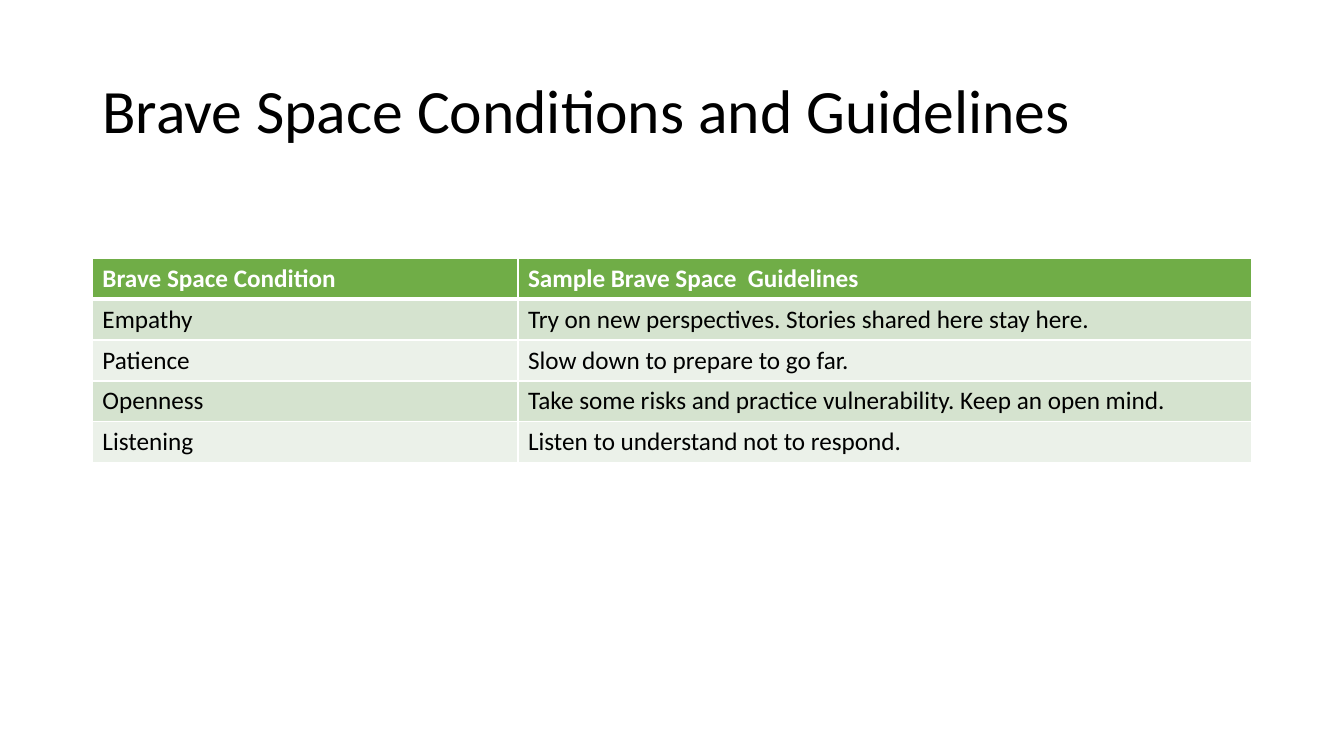
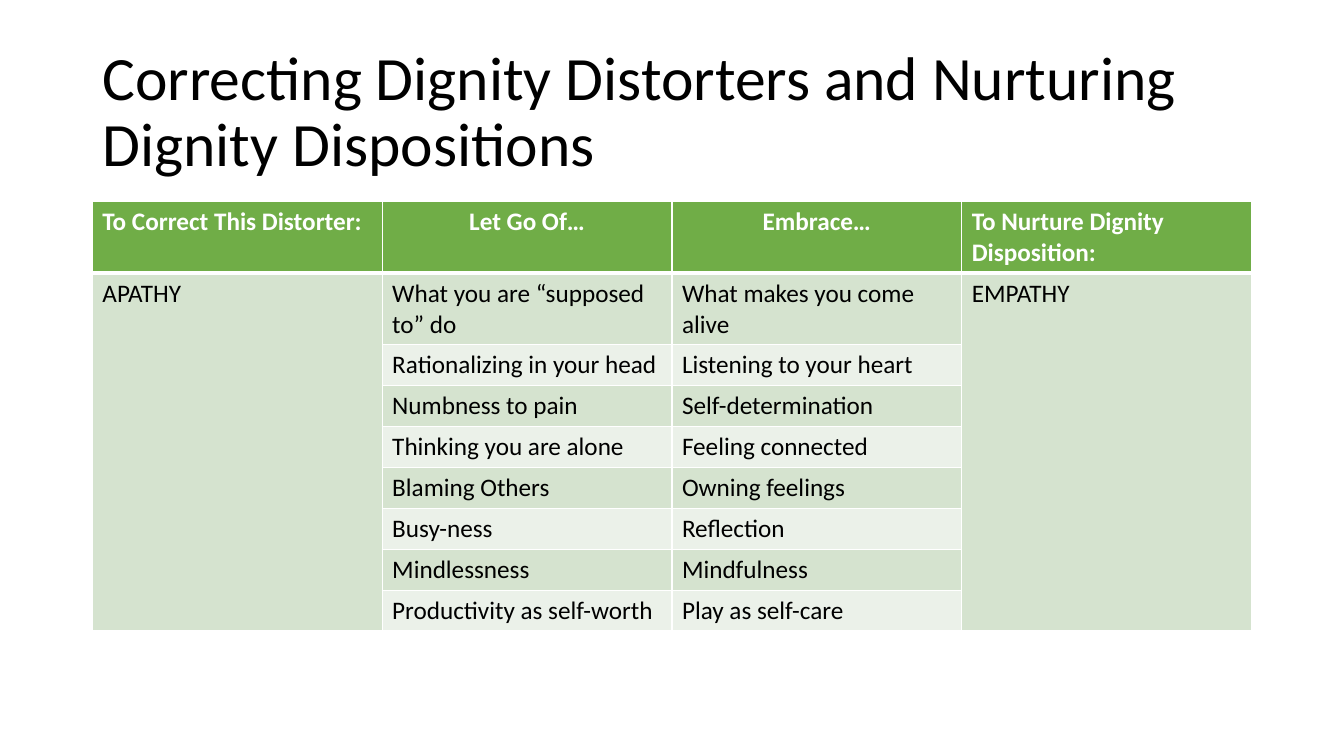
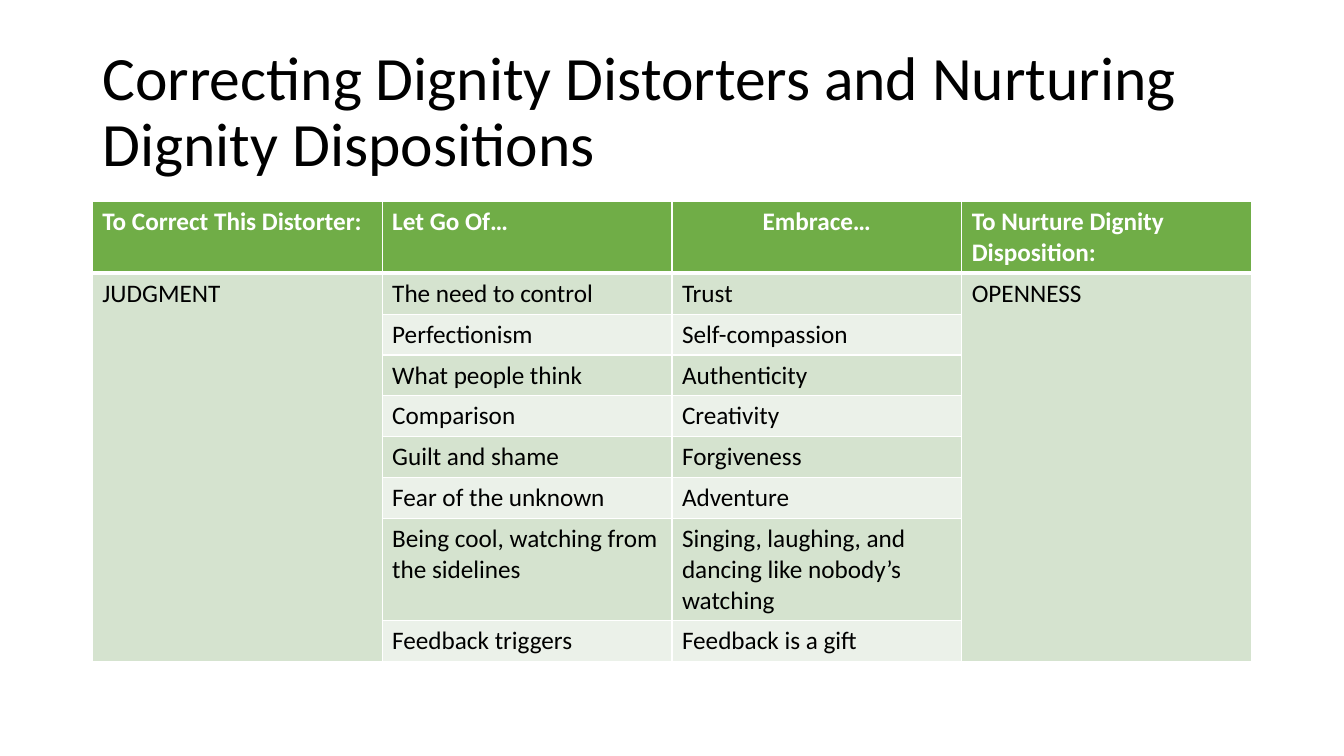
import dataclasses

import pptx
import pptx.dml.color
import pptx.enum.text
import pptx.oxml
import pptx.oxml.ns
import pptx.util

Pt = pptx.util.Pt
RGB = pptx.dml.color.RGBColor.from_string
ALIGN = pptx.enum.text.PP_ALIGN
ANCHOR = pptx.enum.text.MSO_ANCHOR


@dataclasses.dataclass(frozen=True)
class Theme:
    font: str = "Calibri"
    title_size: int = 44
    body_size: int = 18
    text: str = "000000"
    light: str = "FFFFFF"
    header: str = "70AD47"
    bands: tuple = ("D5E3CF", "EBF1E9")
    left: float = 66
    width: float = 828
    title_top: float = 28.75
    title_height: float = 104.4
    row_height: float = 29.2
    thin: int = 1
    thick: int = 3


class Deck:
    """Build titled slides with banded tables in one shared style."""

    def __init__(self, theme):
        self.theme = theme
        self.prs = pptx.Presentation()
        self.prs.slide_width, self.prs.slide_height = Pt(960), Pt(540)
        self.s = None

    def add_text(self, tf, text, size, color, bold=False, align=ALIGN.LEFT, spacing=1.0):
        p = tf.paragraphs[0]
        p.alignment, p.line_spacing = align, spacing
        r = p.add_run()
        r.text = text
        formats = {"name": self.theme.font, "size": Pt(size), "bold": bold}
        for name, value in formats.items():
            setattr(r.font, name, value)
        r.font.color.rgb = RGB(color)

    def slide(self, title):
        t = self.theme
        self.s = self.prs.slides.add_slide(self.prs.slide_layouts[5])
        sp = self.s.shapes.title
        place = {"left": t.left, "top": t.title_top, "width": t.width, "height": t.title_height}
        for name, value in place.items():
            setattr(sp, name, Pt(value))
        tf = sp.text_frame
        frame = {"word_wrap": True, "vertical_anchor": ANCHOR.MIDDLE,
                 "auto_size": pptx.enum.text.MSO_AUTO_SIZE.NONE}
        for name, value in frame.items():
            setattr(tf, name, value)
        self.add_text(tf, title, t.title_size, t.text, spacing=0.9)

    def borders(self, cell, top, bottom):
        t = self.theme
        widths = {"lnL": t.thin, "lnR": t.thin, "lnT": top, "lnB": bottom}
        tc_pr = cell._tc.get_or_add_tcPr()
        for i, (tag, width) in enumerate(widths.items()):
            tc_pr.insert(i, pptx.oxml.parse_xml(
                f'<a:{tag} {pptx.oxml.ns.nsdecls("a")} w="{Pt(width)}"><a:solidFill>'
                f'<a:srgbClr val="{t.light}"/></a:solidFill></a:{tag}>'))

    def cell(self, cell, row, text, centered):
        t = self.theme
        is_header = row == 0
        cell.fill.solid()
        cell.fill.fore_color.rgb = RGB(t.header if is_header else t.bands[(row - 1) % 2])
        self.borders(cell, t.thick if row == 1 else t.thin, t.thick if is_header else t.thin)
        if text:
            self.add_text(cell.text_frame, text, t.body_size, t.light if is_header else t.text,
                          is_header, ALIGN.CENTER if is_header and centered else ALIGN.LEFT)

    def table(self, top, widths, rows, centered=()):
        t = self.theme
        height = t.row_height * len(rows)
        table = self.s.shapes.add_table(len(rows), len(widths), Pt(t.left), Pt(top),
                                        Pt(t.width), Pt(height)).table
        for column, width in zip(table.columns, widths):
            column.width = Pt(width)
        for i, row in enumerate(rows):
            table.rows[i].height = Pt(t.row_height)
            for j, text in enumerate(row):
                self.cell(table.cell(i, j), i, text, j in centered)
        return table

    def comparison(self, distorter, disposition, pairs, centered):
        self.slide("Correcting Dignity Distorters and Nurturing Dignity Dispositions")
        rows = [("To Correct This Distorter:", "Let Go Of…", "Embrace…",
                 "To Nurture Dignity Disposition:")]
        rows += [(None, *pair, None) for pair in pairs]
        rows[1] = (distorter, *pairs[0], disposition)
        table = self.table(144, [self.theme.width / 4] * 4, rows, centered)
        for j in (0, 3):
            table.cell(1, j).merge(table.cell(len(pairs), j))


def main():
    deck = Deck(Theme())
    deck.slide("Brave Space Conditions and Guidelines")
    deck.table(184.5, (304, 524), [
        ("Brave Space Condition", "Sample Brave Space  Guidelines"),
        ("Empathy", "Try on new perspectives. Stories shared here stay here."),
        ("Patience", "Slow down to prepare to go far."),
        ("Openness", "Take some risks and practice vulnerability. Keep an open mind."),
        ("Listening", "Listen to understand not to respond."),
    ])
    deck.comparison("APATHY", "EMPATHY", [
        ("What you are “supposed to” do", "What makes you come alive"),
        ("Rationalizing in your head", "Listening to your heart"),
        ("Numbness to pain", "Self-determination"),
        ("Thinking you are alone", "Feeling connected"),
        ("Blaming Others", "Owning feelings"),
        ("Busy-ness", "Reflection"),
        ("Mindlessness", "Mindfulness"),
        ("Productivity as self-worth", "Play as self-care"),
    ], centered=(1, 2))
    deck.comparison("JUDGMENT", "OPENNESS", [
        ("The need to control", "Trust"),
        ("Perfectionism", "Self-compassion"),
        ("What people think", "Authenticity"),
        ("Comparison", "Creativity"),
        ("Guilt and shame", "Forgiveness"),
        ("Fear of the unknown", "Adventure"),
        ("Being cool, watching from the sidelines",
         "Singing, laughing, and dancing like nobody’s watching"),
        ("Feedback triggers", "Feedback is a gift"),
    ], centered=(2,))
    deck.prs.save("out.pptx")


if __name__ == "__main__":
    main()
